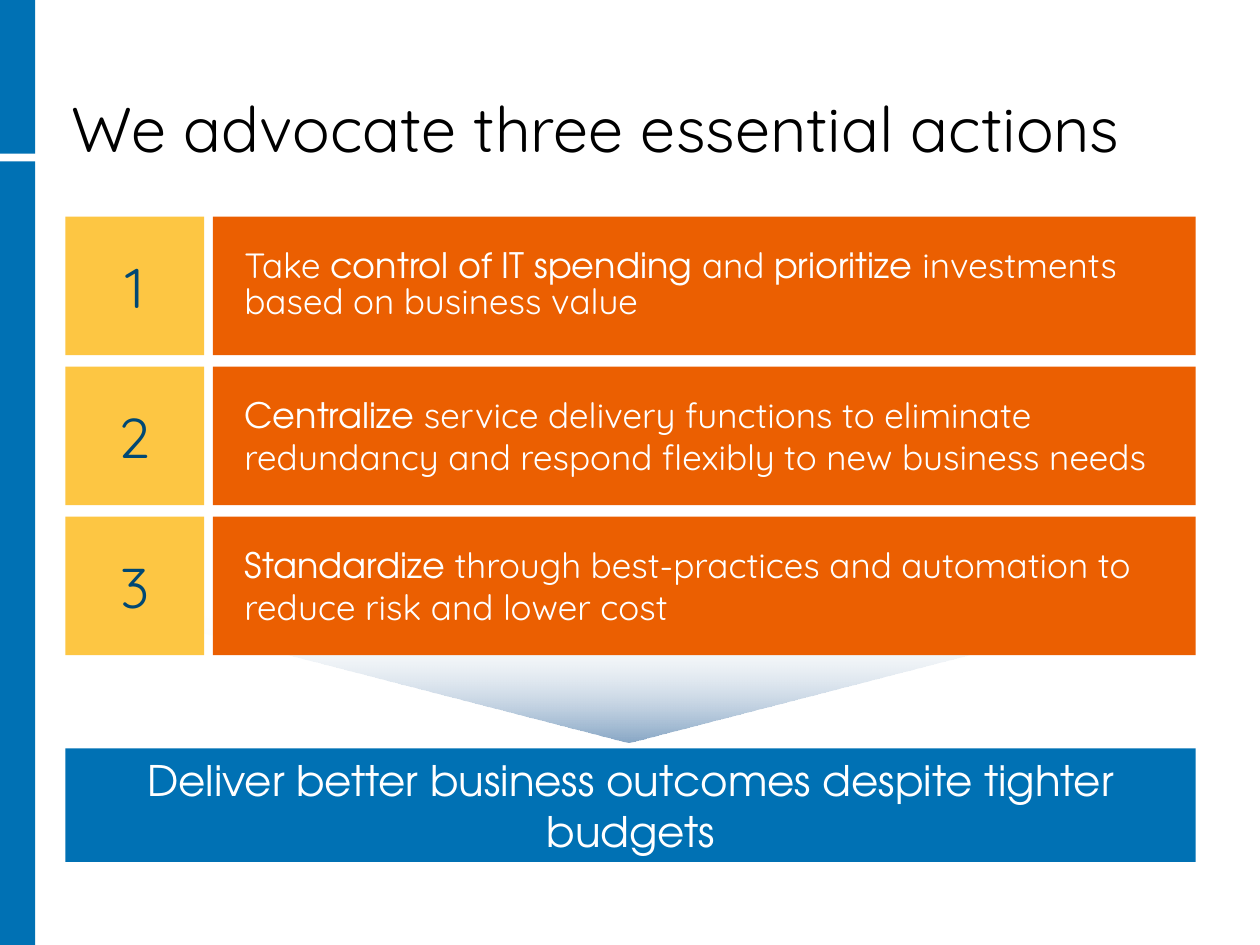
from lxml import etree
from pptx import Presentation
from pptx.dml.color import RGBColor
from pptx.enum.shapes import MSO_SHAPE
from pptx.enum.text import MSO_ANCHOR, MSO_AUTO_SIZE, PP_ALIGN
from pptx.oxml.ns import qn
from pptx.util import Inches, Pt

RECT, TRI = MSO_SHAPE.RECTANGLE, MSO_SHAPE.ISOSCELES_TRIANGLE
MID, LOW = MSO_ANCHOR.MIDDLE, MSO_ANCHOR.BOTTOM
LEFT, MIDDLE = PP_ALIGN.LEFT, PP_ALIGN.CENTER

# Content: each action is a list of (text, is key phrase)
TITLE = "We advocate three essential actions"
ACTIONS = [
    [("Take ", False), ("control of IT spending", True), (" and ", False),
     ("prioritize ", True), ("investments based on business value", False)],
    [("Centralize ", True),
     ("service delivery functions to eliminate redundancy and respond "
      "flexibly to new business needs", False)],
    [("Standardize", True),
     (" through best-practices and automation to reduce risk and lower cost",
      False)],
]
RESULT = "Deliver better business outcomes despite tighter budgets"

COLORS = {"blue": "0071B4", "orange": "EB5F01", "gold": "FDC643",
          "navy": "004874", "white": "FFFFFF", "black": "000000",
          "steel": "87A6C5"}
BODY, KEY = "Quicksand", "TeX Gyre Adventor"

# Layout
EDGE, RIGHT = 0.52, 9.49
TOP, STEP, SIDE = 1.72, 1.19, 1.1
BAR = 1.69


def color(name):
    return RGBColor.from_string(COLORS[name])


def add_box(shapes, x, y, w, h, fill, kind=RECT):
    box = shapes.add_shape(kind, Inches(x), Inches(y), Inches(w), Inches(h))
    box.shadow.inherit = False
    box.line.fill.background()
    if fill:
        box.fill.solid()
        box.fill.fore_color.rgb = color(fill)
    return box


def put_text(shape, runs, size, ink="white", align=LEFT, anchor=MID,
             pad=0.1, space=1.0):
    frame = shape.text_frame
    frame.word_wrap = True
    frame.auto_size = MSO_AUTO_SIZE.NONE
    frame.vertical_anchor = anchor
    frame.margin_left = frame.margin_right = Inches(pad)
    frame.margin_top = frame.margin_bottom = Inches(0.05)
    para = frame.paragraphs[0]
    para.alignment = align
    para.line_spacing = space
    para.space_before = Pt(0)
    for text, key in runs:
        run = para.add_run()
        run.text = text
        run.font.name = KEY if key else BODY
        run.font.size = Pt(size)
        run.font.color.rgb = color(ink)


deck = Presentation()
deck.slide_width, deck.slide_height = Inches(10), Inches(7.5)
slide = deck.slides.add_slide(deck.slide_layouts[5])
shapes = slide.shapes

# Side stripe
for y, h in [(1.28, 6.22), (0, 1.22)]:
    add_box(shapes, 0, y, 0.28, h, "blue")

# Arrow pointing down to the result, fading out upwards
arrow = add_box(shapes, 1.1, 4.89, 7.79, 1, None, TRI)
arrow.fill.gradient()
arrow.fill.gradient_angle = 270
for stop, name in zip(arrow.fill.gradient_stops, ("steel", "white")):
    stop.color.rgb = color(name)
fade = list(arrow.element.spPr.iter(qn("a:srgbClr")))[-1]
etree.SubElement(fade, qn("a:alpha")).set("val", "0")
arrow.element.spPr.find(qn("a:xfrm")).set("flipV", "1")

# Title
title = shapes.title
title.left, title.top = Inches(0.47), Inches(0.12)
title.width, title.height = Inches(9.02), Inches(1.25)
put_text(title, [(TITLE, False)], 36, ink="black", anchor=LOW, space=0.9)

# Numbered actions
for i, runs in enumerate(ACTIONS):
    y = TOP + i * STEP
    group = shapes.add_group_shape().shapes
    bar = add_box(group, BAR, y, RIGHT - BAR, SIDE, "orange")
    put_text(bar, runs, 20, pad=0.25, space=1.0 if i else 0.85)
    tile = add_box(group, EDGE, y, SIDE, SIDE, "gold")
    put_text(tile, [(str(i + 1), False)], 32, ink="navy", align=MIDDLE)

# Result
band = add_box(shapes, EDGE, 5.94, RIGHT - EDGE, 0.9, "blue")
put_text(band, [(RESULT, True)], 24, align=MIDDLE, pad=0.25)

deck.save("out.pptx")
